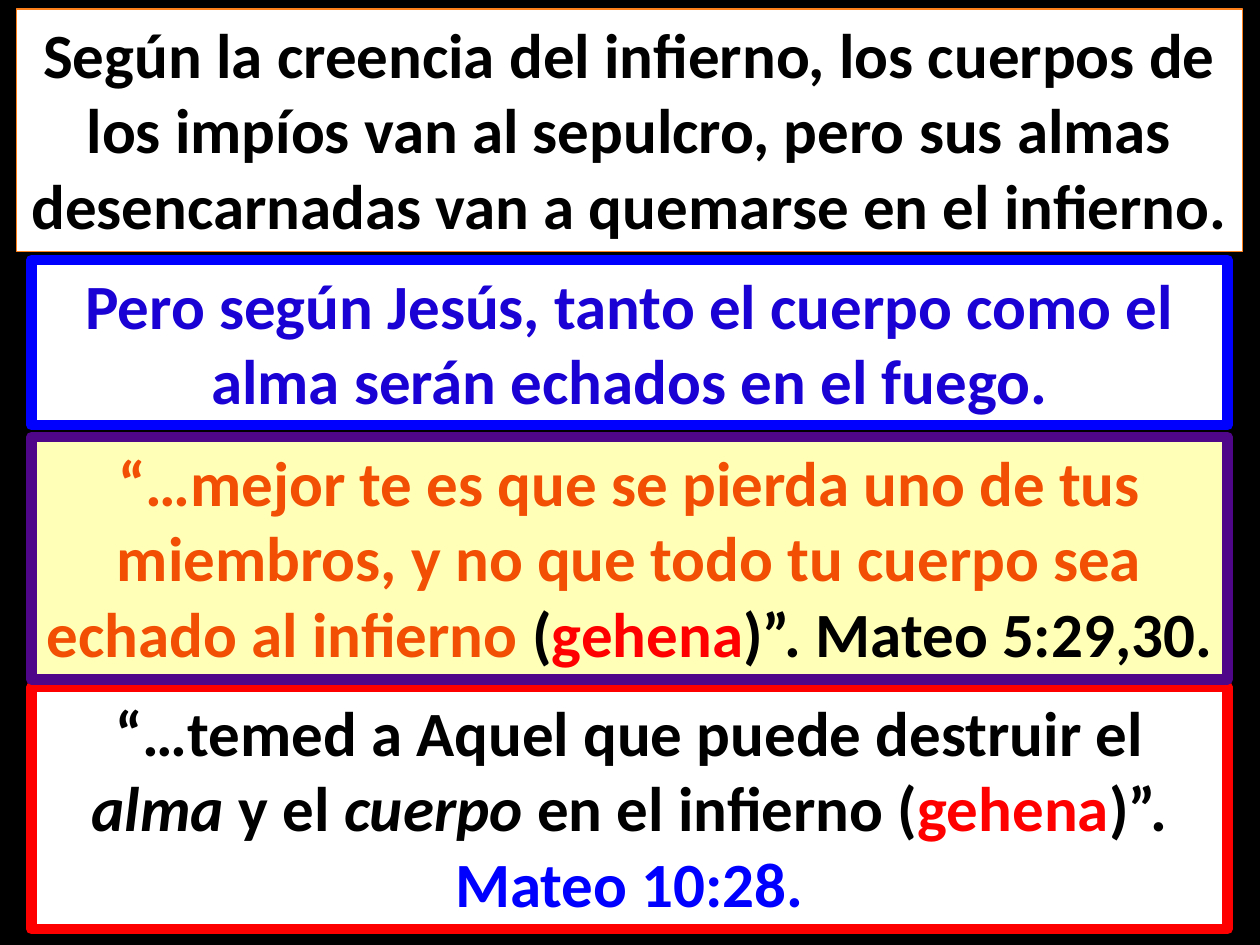
"""Build a slide of four stacked text panels on hell, body and soul."""
import pptx
import pptx.dml.color
import pptx.enum.text
import pptx.util
import lxml.etree
from pptx.oxml.ns import qn

Pt = pptx.util.Pt
RGB = pptx.dml.color.RGBColor.from_string

theme = dict(font="Calibri", size=36, edge=0.75, black="000000", white="FFFFFF",
             cream="FFFFB7", blue="0000FF", navy="1B02D4", amber="FE801A",
             red="FF0000", rust="F24E04", wine="C00000", plum="500688")

panels = [
    (18, 148.5, 683.5, 94.5, "white", "blue", 6, [
        ("Pero según Jesús, tanto el cuerpo como el alma serán echados en el fuego.",
         "navy", False)]),
    (9.5, 5.25, 700.5, 138.5, "white", "amber", 1, [
        ("Según la creencia del infierno, los cuerpos de los impíos van al sepulcro, "
         "pero sus almas desencarnadas van a quemarse en el infierno.", "black", False)]),
    (18, 392.5, 683.5, 138.5, "white", "red", 6, [
        ("“…temed a Aquel que puede destruir el ", "black", False),
        ("alma", "black", True),
        (" y el ", "black", False),
        ("cuerpo ", "black", True),
        ("en el infierno (", "black", False),
        ("gehena", "red", False),
        (")”. ", "black", False),
        ("Mateo 10:28.", "blue", False)]),
    (18, 249.75, 683.5, 138.5, "cream", "plum", 6, [
        ("“…mejor te es que se pierda uno de tus miembros, y no que todo tu cuerpo "
         "sea echado al infierno ", "rust", False),
        ("(", "black", False),
        ("gehena", "red", False),
        (")”. Mateo 5:29,30.", "black", False)]),
]


def trim(run, color):
    """Give the letters of a run a thin outline."""
    line = lxml.etree.Element(qn("a:ln"), w=str(Pt(theme["edge"])))
    fill = lxml.etree.SubElement(line, qn("a:solidFill"))
    lxml.etree.SubElement(fill, qn("a:srgbClr"), val=theme[color])
    run.font._element.insert(0, line)


deck = pptx.Presentation()
deck.slide_width, deck.slide_height = Pt(720), Pt(540)
slide = deck.slides.add_slide(deck.slide_layouts[6])
back = slide.background.fill
back.solid()
back.fore_color.rgb = RGB(theme["black"])

for left, top, width, height, fill, edge, weight, runs in panels:
    box = slide.shapes.add_textbox(Pt(left), Pt(top), Pt(width), Pt(height))
    box.fill.solid()
    box.fill.fore_color.rgb = RGB(theme[fill])
    box.line.color.rgb = RGB(theme[edge])
    box.line.width = Pt(weight)
    frame = box.text_frame
    frame.word_wrap = True
    frame.auto_size = pptx.enum.text.MSO_AUTO_SIZE.SHAPE_TO_FIT_TEXT
    para = frame.paragraphs[0]
    para.alignment = pptx.enum.text.PP_ALIGN.CENTER
    para.font.name = theme["font"]
    para.font.size = Pt(theme["size"])
    para.font.bold = True
    for text, color, slant in runs:
        run = para.add_run()
        run.text = text
        run.font.color.rgb = RGB(theme[color])
        if slant:
            run.font.italic = True
        trim(run, "wine" if color == "rust" else color)

deck.save("out.pptx")
